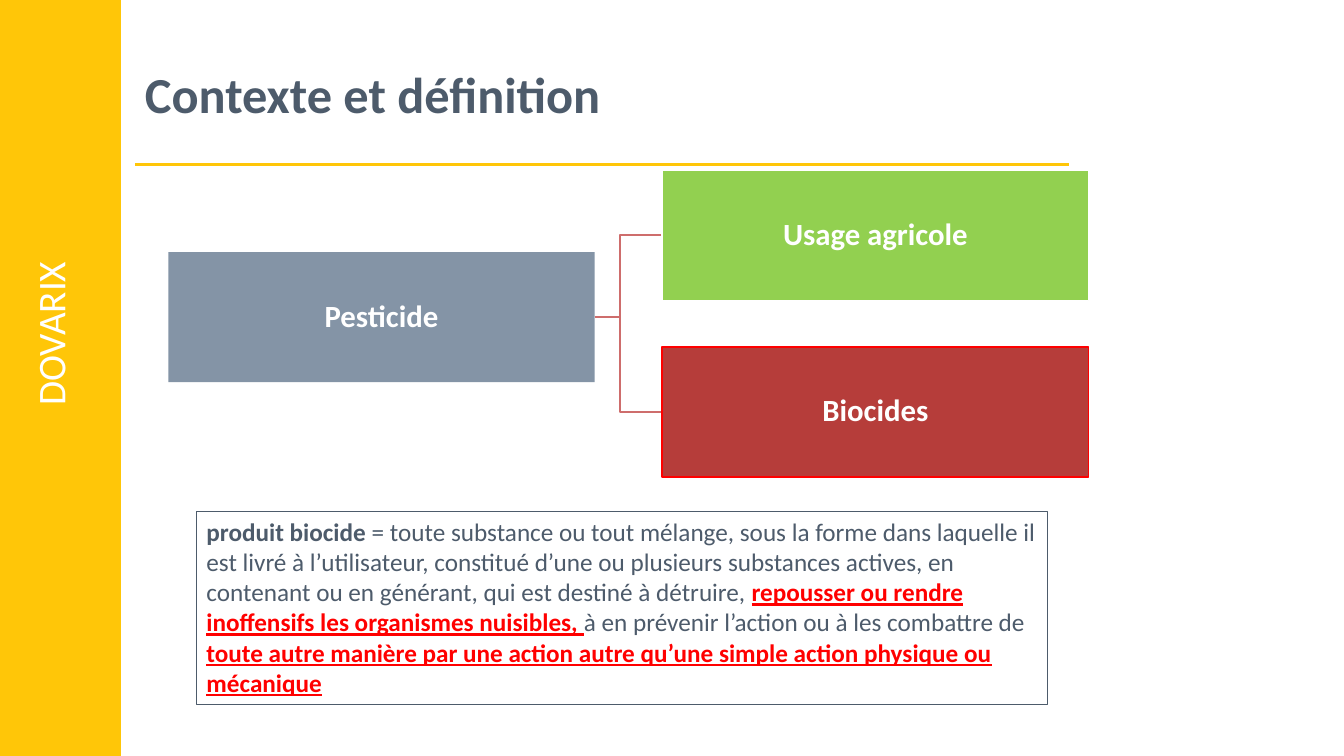
from dataclasses import dataclass

import lxml.etree
import pptx
import pptx.dml.color
import pptx.enum.shapes
import pptx.enum.text
import pptx.oxml.ns
import pptx.util

Pt = pptx.util.Pt
ALIGN = pptx.enum.text.PP_ALIGN
ANCHOR = pptx.enum.text.MSO_ANCHOR

COLORS = {
    "yellow": "FFC608",
    "slate": "4D5B6B",
    "grey": "8494A6",
    "green": "92D050",
    "brick": "B63D3A",
    "rose": "CE6D6C",
    "red": "FF0000",
    "white": "FFFFFF",
}


@dataclass
class Run:
    text: str
    size: float
    color: str
    bold: bool = False
    underline: bool = False


@dataclass
class Box:
    left: float
    top: float
    width: float
    height: float
    fill: str | None = None
    line: str | None = None
    line_width: float = 1.25

    @property
    def middle(self) -> float:
        return self.top + self.height / 2


@dataclass
class Node:
    label: str
    box: Box


NODE_WIDTH, NODE_HEIGHT = 304.56, 92.88
ROOT = Node("Pesticide", Box(120.24, 180, NODE_WIDTH, NODE_HEIGHT, "grey"))
BRANCHES = [
    Node("Usage agricole", Box(473.04, 121.68, NODE_WIDTH, NODE_HEIGHT, "green", "white")),
    Node("Biocides", Box(473.04, 247.68, NODE_WIDTH, NODE_HEIGHT, "brick", "red")),
]
ELBOW_X = 442.8

DEFINITION = [
    Run("produit biocide ", 18, "slate", bold=True),
    Run("= toute substance ou tout mélange, sous la forme dans laquelle il est livré "
        "à l’utilisateur, constitué d’une ou plusieurs substances actives, en contenant "
        "ou en générant, qui est destiné à détruire, ", 18, "slate"),
    Run("repousser ou rendre inoffensifs les organismes nuisibles, ", 18, "red", True, True),
    Run("à en prévenir l’action ou à les combattre de ", 18, "slate"),
    Run("toute autre manière par une action autre qu’une simple action physique "
        "ou mécanique", 18, "red", True, True),
]


def rgb(name: str) -> pptx.dml.color.RGBColor:
    return pptx.dml.color.RGBColor.from_string(COLORS[name])


def set_line(line, color: str, width: float) -> None:
    line.color.rgb = rgb(color)
    line.width = Pt(width)


def add_box(shapes, box: Box):
    s = shapes.add_shape(pptx.enum.shapes.MSO_SHAPE.RECTANGLE,
                         Pt(box.left), Pt(box.top), Pt(box.width), Pt(box.height))
    s.shadow.inherit = False
    if box.fill:
        s.fill.solid()
        s.fill.fore_color.rgb = rgb(box.fill)
    else:
        s.fill.background()
    if box.line:
        set_line(s.line, box.line, box.line_width)
    else:
        s.line.fill.background()
    return s


def add_textbox(shapes, box: Box):
    return shapes.add_textbox(Pt(box.left), Pt(box.top), Pt(box.width), Pt(box.height))


def write(s, runs: list[Run], align=ALIGN.LEFT, anchor=ANCHOR.TOP,
          inset: float | None = None, spacing: float = 1.0) -> None:
    tf = s.text_frame
    frame_format = {"word_wrap": True, "vertical_anchor": anchor}
    if inset is not None:
        for side in ("left", "right", "top", "bottom"):
            frame_format[f"margin_{side}"] = Pt(inset)
    for name, value in frame_format.items():
        setattr(tf, name, value)
    p = tf.paragraphs[0]
    p.alignment = align
    p.line_spacing = spacing
    for run in runs:
        r = p.add_run()
        r.text = run.text
        font_format = {"name": "Calibri", "size": Pt(run.size),
                       "bold": run.bold, "underline": run.underline}
        for name, value in font_format.items():
            setattr(r.font, name, value)
        r.font.color.rgb = rgb(run.color)


def add_node(shapes, node: Node) -> None:
    write(add_box(shapes, node.box), [Run(node.label, 22, "white", bold=True)],
          ALIGN.CENTER, ANCHOR.MIDDLE, inset=1.44, spacing=0.9)


def add_branch_line(shapes, start: Box, end: Box) -> None:
    """Draw an elbow from the right of start to the left of end."""
    builder = shapes.build_freeform(Pt(start.left + start.width), Pt(start.middle))
    corners = [(ELBOW_X, start.middle), (ELBOW_X, end.middle), (end.left, end.middle)]
    builder.add_line_segments([(Pt(x), Pt(y)) for x, y in corners], close=False)
    s = builder.convert_to_shape()
    s.shadow.inherit = False
    s.fill.background()
    set_line(s.line, "rose", 1.25)


def add_side_band(shapes) -> None:
    add_box(shapes, Box(-0.72, 0, 87.12, 540, "yellow"))
    s = add_textbox(shapes, Box(15.12, 158.4, 48.24, 159.84))
    write(s, [Run("DOVARIX", 28, "white")], ALIGN.CENTER)
    s.element.txBody.bodyPr.set("vert", "vert270")


def add_title(shapes) -> None:
    left, width, rule_y = 96.48, 667.44, 117.36
    rule = shapes.add_connector(pptx.enum.shapes.MSO_CONNECTOR.STRAIGHT,
                                Pt(left), Pt(rule_y), Pt(left + width), Pt(rule_y))
    set_line(rule.line, "yellow", 2.25)
    lxml.etree.SubElement(rule.element.spPr, pptx.oxml.ns.qn("a:effectLst"))
    s = add_textbox(shapes, Box(left, 21.6, width, 90))
    write(s, [Run("Contexte et définition", 36, "slate", bold=True)], anchor=ANCHOR.MIDDLE)


def main() -> None:
    prs = pptx.Presentation()
    prs.slide_width, prs.slide_height = Pt(960), Pt(540)
    shapes = prs.slides.add_slide(prs.slide_layouts[6]).shapes

    add_side_band(shapes)
    add_title(shapes)
    for branch in BRANCHES:
        add_branch_line(shapes, ROOT.box, branch.box)
    for node in [ROOT, *BRANCHES]:
        add_node(shapes, node)
    write(add_box(shapes, Box(140.4, 365.04, 607.68, 138.24, line="slate", line_width=0.75)),
          DEFINITION)

    prs.save("out.pptx")


if __name__ == "__main__":
    main()
